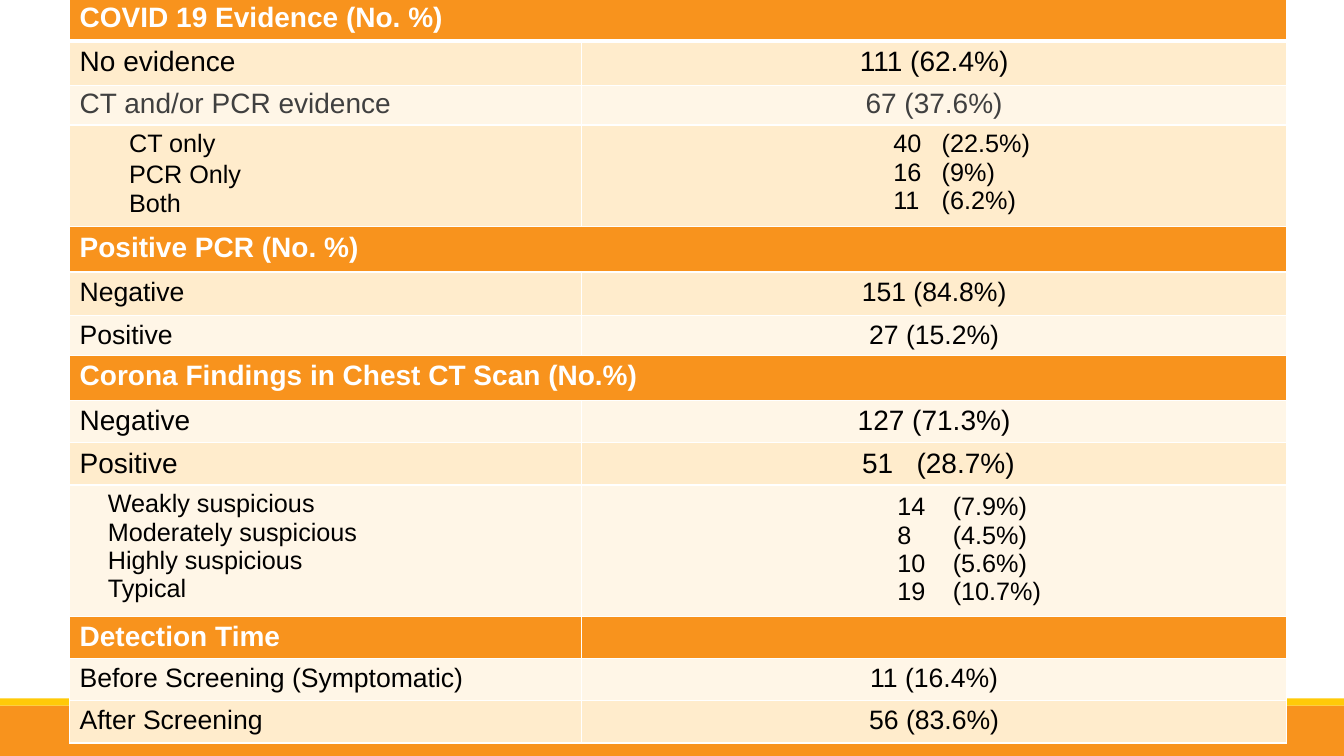
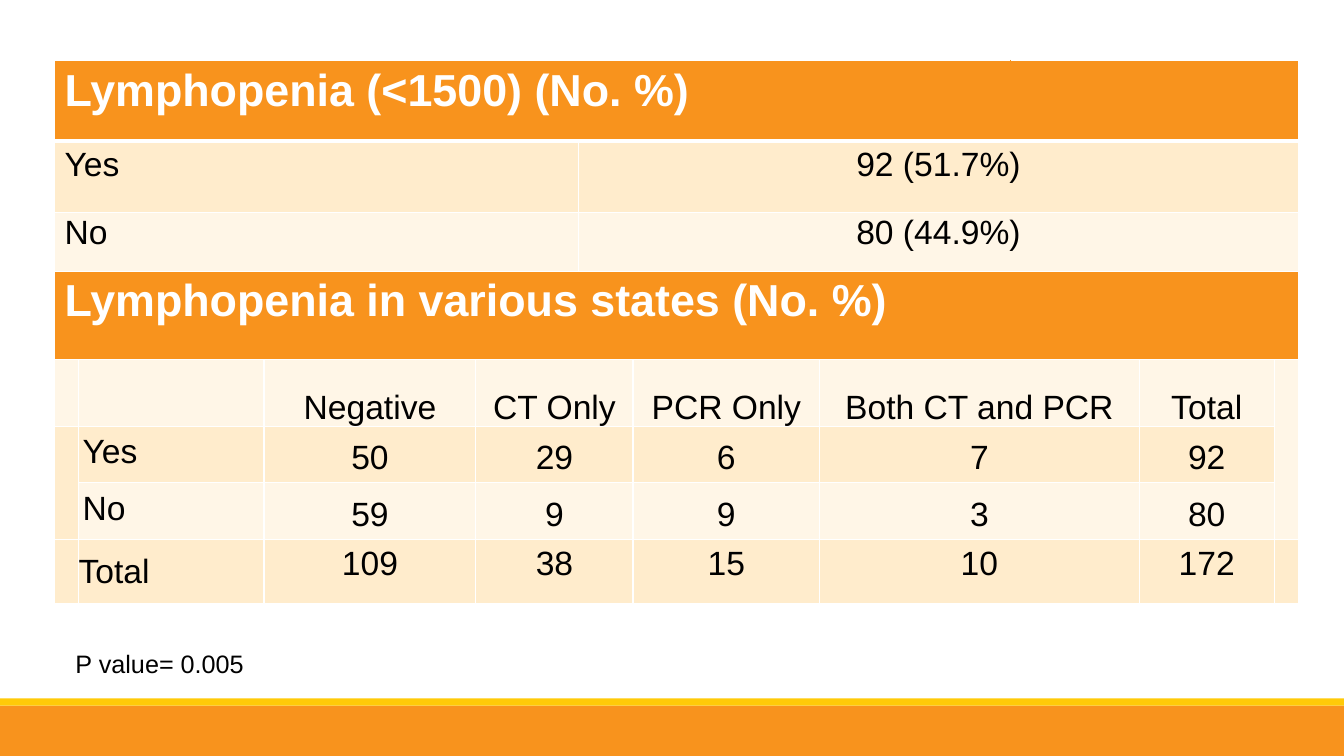
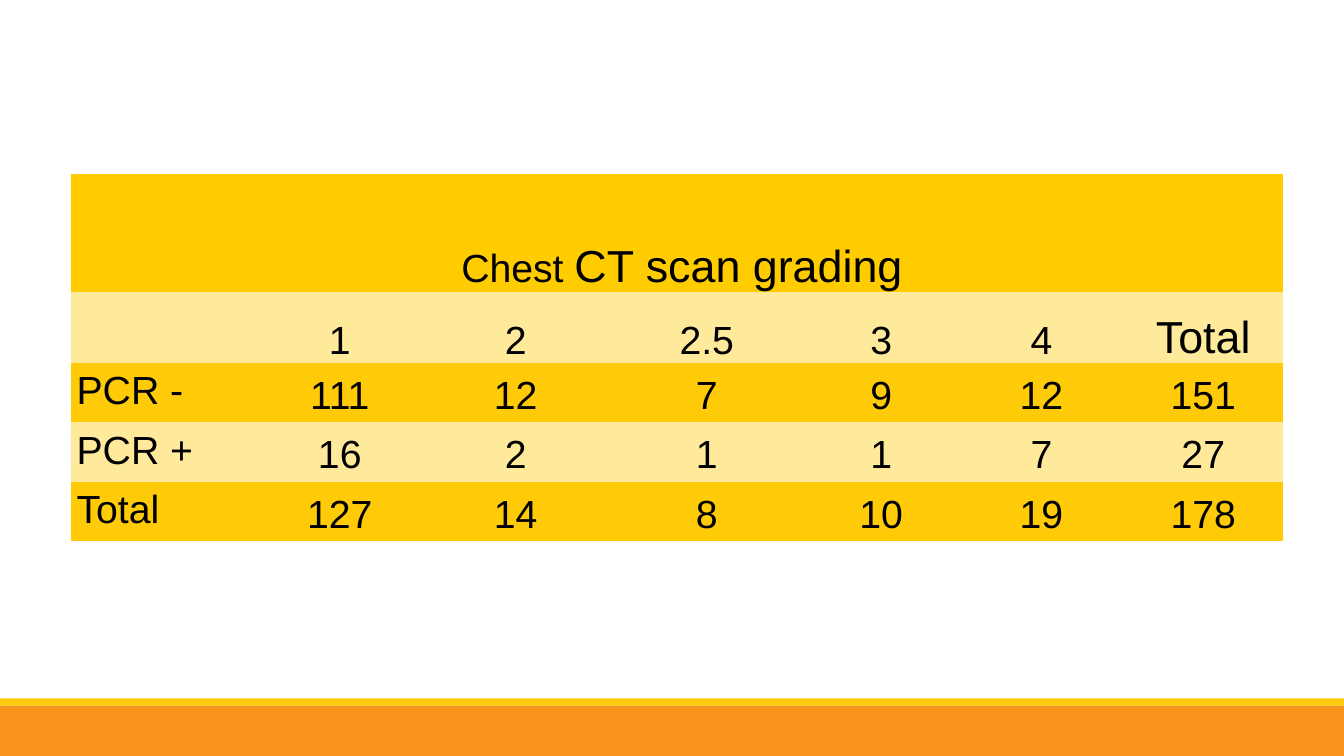
import pptx
import pptx.util
import pptx.dml.color
import pptx.enum.shapes
import pptx.enum.text
import pptx.oxml
import pptx.oxml.ns

Inches, Pt = pptx.util.Inches, pptx.util.Pt
RGBColor = pptx.dml.color.RGBColor
ALIGN = pptx.enum.text.PP_ALIGN
ANCHOR = pptx.enum.text.MSO_ANCHOR

ORANGE = RGBColor(0xF8, 0x93, 0x1D)
GOLD = RGBColor(0xFF, 0xCA, 0x08)
BRIGHT = RGBColor(0xFF, 0xCC, 0x00)
PALE = RGBColor(0xFF, 0xEA, 0x9C)
PEACH = RGBColor(0xFF, 0xEC, 0xCC)
CREAM = RGBColor(0xFF, 0xF6, 0xE7)
WHITE = RGBColor(0xFF, 0xFF, 0xFF)
BLACK = RGBColor(0, 0, 0)
GREY = RGBColor(0x40, 0x40, 0x40)
FONT = "Arial"
WIDE, HIGH = 13.33, 7.5


def ink(par, text, size=20, color=BLACK, bold=False):
    """Add one run to a paragraph."""
    run = par.add_run()
    run.text = text
    font = run.font
    font.name, font.size, font.bold = FONT, Pt(size), bold
    font.color.rgb = color


def write(frame, text, align=ALIGN.LEFT, lead=None, after=None, left=0, hang=0, **look):
    """Fill a text frame, one paragraph a line; hang pulls the first word left of its tab."""
    for i, line in enumerate(text.split("\n")):
        par = frame.add_paragraph() if i else frame.paragraphs[0]
        par.alignment = align
        if lead:
            par.line_spacing = lead
        if after and not i:
            par.space_after = Pt(after)
        if left:
            prop = par._p.get_or_add_pPr()
            prop.set("marL", str(Inches(left)))
            prop.set("indent", str(-Inches(hang)))
        ink(par, line, **look)
    return par


def put(cell, text, anchor=ANCHOR.TOP, pad=(0.1, 0.05, 0.1, 0.05), **look):
    """Write in a cell; pad is left, top, right, bottom."""
    cell.vertical_anchor = anchor
    (cell.margin_left, cell.margin_top,
     cell.margin_right, cell.margin_bottom) = map(Inches, pad)
    return write(cell.text_frame, text, **look)


def edge(cell, color, low=1):
    """Draw the four borders, or none; low is the width of the bottom one."""
    prop = cell._tc.get_or_add_tcPr()
    for side in "LRTB":
        width = Pt(low if side == "B" else 1)
        fill = (f'<a:solidFill><a:srgbClr val="{color}"/></a:solidFill>'
                if color else "<a:noFill/>")
        prop.append(pptx.oxml.parse_xml(
            f'<a:ln{side} {pptx.oxml.ns.nsdecls("a")} w="{width}">{fill}</a:ln{side}>'))


def tint(cell, side, color):
    """Recolour one border that edge has drawn."""
    border = cell._tc.get_or_add_tcPr().find(pptx.oxml.ns.qn(f"a:ln{side}"))
    for node in border.iter(pptx.oxml.ns.qn("a:srgbClr")):
        node.set("val", str(color))


def grid(slide, left, top, cols, rows, fills, spans=(), line=WHITE, low=1):
    """Add a table with one fill a row; spans are (row, col, row, col)."""
    table = slide.shapes.add_table(
        len(rows), len(cols), Inches(left), Inches(top),
        Inches(sum(cols)), Inches(sum(rows))).table
    table.first_row = table.horz_banding = False
    for col, size in zip(table.columns, cols):
        col.width = Inches(size)
    for row, size in zip(table.rows, rows):
        row.height = Inches(size)
    for r, c, r2, c2 in spans:
        table.cell(r, c).merge(table.cell(r2, c2))
    for r, fill in enumerate(fills):
        for cell in table.rows[r].cells:
            edge(cell, line, low if r == 0 else 1)
            cell.fill.solid()
            cell.fill.fore_color.rgb = fill
    return table


def base(deck):
    """Add a blank slide with the bands at its foot."""
    slide = deck.slides.add_slide(deck.slide_layouts[6])
    for top, tall, color in ((7, 0.5, ORANGE), (6.93, 0.07, GOLD)):
        band = slide.shapes.add_shape(
            pptx.enum.shapes.MSO_SHAPE.RECTANGLE,
            0, Inches(top), Inches(WIDE), Inches(tall))
        band.shadow.inherit = False
        band.fill.solid()
        band.fill.fore_color.rgb = color
        band.line.fill.background()
    return slide


def findings(deck):
    mid = {"align": ALIGN.CENTER}
    soft = {"color": GREY, "lead": 0.9, "after": 2}
    small = {"size": 19}
    # height, fill, label, its format, value, its format
    data = [
        (0.44, ORANGE, "COVID 19 Evidence (No. %)", {}, "", {}),
        (0.44, PEACH, "No evidence", {}, "111 (62.4%)", mid),
        (0.39, CREAM, "CT and/or PCR evidence", soft, "67 (37.6%)", {**mid, **soft}),
        (1.01, PEACH, "CT only\nPCR Only\nBoth", {"size": 18, "left": 0.49, "after": 2},
         "40\t(22.5%)\n16\t(9%)\n11\t(6.2%)", {"size": 18, "left": 3.47, "hang": 0.48}),
        (0.45, ORANGE, "Positive PCR (No. %)", {}, "", {}),
        (0.43, PEACH, "Negative", small, "151 (84.8%)", {**mid, **small}),
        (0.39, CREAM, "Positive", small, "27 (15.2%)", {**mid, **small}),
        (0.45, ORANGE, "Corona Findings in Chest CT Scan (No.%)", {}, "", {}),
        (0.42, CREAM, "Negative", {}, "127 (71.3%)", mid),
        (0.42, PEACH, "Positive", {}, "51\t(28.7%)", {"left": 3.22, "hang": 0.54}),
        (1.3, CREAM, "Weakly suspicious\nModerately suspicious\nHighly suspicious\nTypical",
         {"size": 18, "left": 0.28},
         "14\t(7.9%)\n8\t(4.5%)\n10\t(5.6%)\n19\t(10.7%)",
         {"size": 18, "left": 3.58, "hang": 0.55, "pad": (0.1, 0.08, 0.1, 0.05)}),
        (0.42, ORANGE, "Detection Time", {}, "", {}),
        (0.42, CREAM, "Before Screening (Symptomatic)", small, "11 (16.4%)", {**mid, **small}),
        (0.42, PEACH, "After Screening", small, "56 (83.6%)", {**mid, **small}),
    ]
    table = grid(base(deck), 0.69, -0.03, [5.08, 6.99],
                 [row[0] for row in data], [row[1] for row in data],
                 [(r, 0, r, 1) for r in (0, 4, 7)], low=3)
    head = {"color": WHITE, "bold": True}
    for r, (_, fill, label, look, value, form) in enumerate(data):
        put(table.cell(r, 0), label, **(head if fill == ORANGE else look))
        if value:
            put(table.cell(r, 1), value, **form)


def states(deck):
    slide = base(deck)
    spans = [(0, 0, 0, 6), (0, 7, 0, 9), (3, 0, 3, 9), (4, 9, 6, 9), (5, 0, 6, 0)]
    for r in (1, 2):
        spans += [(r, 0, r, 3), (r, 4, r, 9)]
    for r in range(4, 8):
        spans += [(r, 3, r, 4), (r, 6, r, 7)]
    table = grid(slide, 0.54, 0.6,
                 [0.23, 1.84, 2.1, 1.02, 0.54, 1.85, 1.89, 1.28, 1.34, 0.23],
                 [0.8, 0.71, 0.58, 0.88, 0.66, 0.56, 0.56, 0.64],
                 [ORANGE, PEACH, CREAM, ORANGE, CREAM, PEACH, CREAM, PEACH],
                 spans, low=3)
    for c, side in ((0, "R"), (6, "R"), (7, "L")):
        tint(table.cell(0, c), side, ORANGE)
    for r, text in ((0, "Lymphopenia (<1500) (No. %)"),
                    (3, "Lymphopenia in various states (No. %)")):
        put(table.cell(r, 0), text, size=32, color=WHITE, bold=True)
    for r, label, value, lead in ((1, "Yes", "92 (51.7%)", None),
                                  (2, "No", "80 (44.9%)", 0.9)):
        put(table.cell(r, 0), label, size=24, lead=lead)
        put(table.cell(r, 4), value, size=24, lead=lead, align=ALIGN.CENTER)

    # label, values, space above, anchors of label and values
    data = [
        ("", ["Negative", "CT Only", "PCR Only", "Both CT and PCR", "Total"],
         0, ANCHOR.TOP, ANCHOR.BOTTOM),
        ("Yes", [50, 29, 6, 7, 92], 0.22, ANCHOR.TOP, ANCHOR.MIDDLE),
        ("No", [59, 9, 9, 3, 80], 0.22, ANCHOR.TOP, ANCHOR.MIDDLE),
        ("Total", [109, 38, 15, 10, 172], 0, ANCHOR.MIDDLE, ANCHOR.MIDDLE),
    ]
    for r, (label, values, gap, side, anchor) in enumerate(data, 4):
        total = label == "Total"
        if label:
            put(table.cell(r, 1), label, side, (0 if total else 0.04, gap, 0, 0),
                size=24, lead=None if total else Pt(16))
        for c, value in zip((2, 3, 5, 6, 8), values):
            put(table.cell(r, c), str(value), anchor, (0, gap, 0, 0),
                size=24, lead=Pt(16), align=ALIGN.CENTER)

    note = slide.shapes.add_textbox(Inches(0.65), Inches(6.38), Inches(1.89), Inches(0.4))
    note.text_frame.word_wrap = False
    write(note.text_frame, "P value= 0.005", size=18)


def grading(deck):
    table = grid(base(deck), 0.7, 1.73, [1.87, 1.6, 1.89, 1.9, 1.56, 1.62, 1.59],
                 [1.17, 0.7, 0.59, 0.59, 0.59], [BRIGHT, PALE, GOLD, PALE, GOLD],
                 [(0, 0, 0, 6)], line=None)
    pad = (0.06, 0, 0.06, 0)
    par = put(table.cell(0, 0), "Chest ", ANCHOR.BOTTOM, (0.16, 0, 0.06, 0),
              size=28, lead=1.15, align=ALIGN.CENTER)
    ink(par, "CT scan grading", size=32)
    data = [
        ["", "1", "2", "2.5", "3", "4", "Total"],
        ["PCR -", "111", "12", "7", "9", "12", "151"],
        ["PCR +", "16", "2", "1", "1", "7", "27"],
        ["Total", "127", "14", "8", "10", "19", "178"],
    ]
    for r, row in enumerate(data, 1):
        for c, text in enumerate(row):
            if not text:
                continue
            anchor = ANCHOR.BOTTOM if r == 1 else ANCHOR.MIDDLE if c else ANCHOR.TOP
            put(table.cell(r, c), text, anchor, pad, lead=1.15,
                size=32 if (r, c) == (1, 6) else 28,
                align=ALIGN.CENTER if c else ALIGN.LEFT)


def main():
    deck = pptx.Presentation()
    deck.slide_width, deck.slide_height = Inches(WIDE), Inches(HIGH)
    findings(deck)
    states(deck)
    grading(deck)
    deck.save("out.pptx")


if __name__ == "__main__":
    main()
